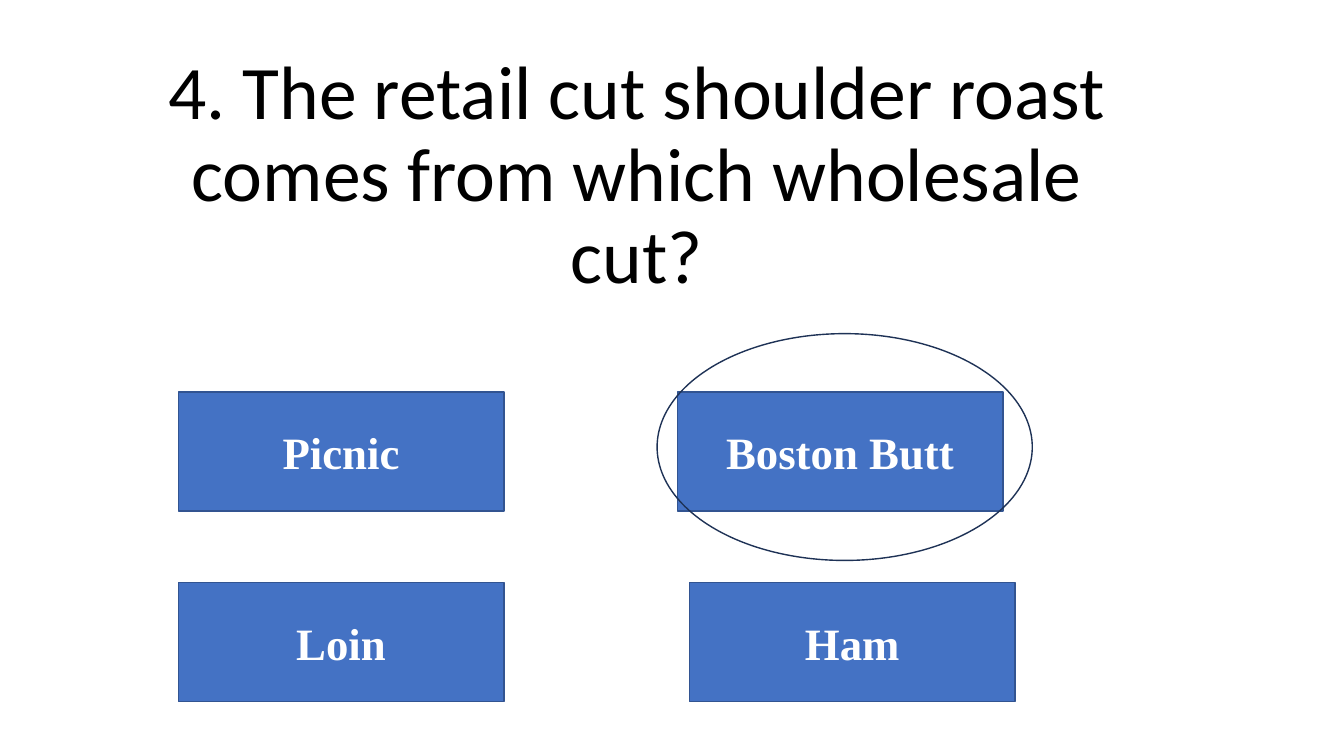
import dataclasses

import pptx
import pptx.dml.color
import pptx.enum.shapes
import pptx.enum.text
import pptx.util

Pt = pptx.util.Pt
RGB = pptx.dml.color.RGBColor.from_string
Kind = pptx.enum.shapes.MSO_SHAPE
Anchor = pptx.enum.text.MSO_ANCHOR


@dataclasses.dataclass
class Theme:
    ink: str = "000000"
    fill: str = "4472C4"
    edge: str = "325491"
    ring: str = "1E3256"
    light: str = "FFFFFF"
    head: str = "Calibri"
    body: str = "Times New Roman"
    big: int = 54
    mid: int = 32
    line: int = 1


class Quiz:
    def __init__(self, slide, theme):
        self.slide = slide
        self.theme = theme

    def label(self, frame, text, face, size, color, bold, anchor):
        frame.text = text
        frame.word_wrap = True
        frame.auto_size = pptx.enum.text.MSO_AUTO_SIZE.NONE
        frame.vertical_anchor = anchor
        para = frame.paragraphs[0]
        para.alignment = pptx.enum.text.PP_ALIGN.CENTER
        font = para.runs[0].font
        font.name, font.size, font.bold = face, Pt(size), bold
        font.color.rgb = RGB(color)

    def title(self, text, left, top, width, height):
        look = self.theme
        shape = self.slide.shapes.title
        shape.left, shape.top = Pt(left), Pt(top)
        shape.width, shape.height = Pt(width), Pt(height)
        self.label(shape.text_frame, text, look.head, look.big, look.ink,
                   False, Anchor.BOTTOM)
        shape.text_frame.paragraphs[0].line_spacing = 0.9

    def shape(self, kind, edge, left, top, width, height):
        shape = self.slide.shapes.add_shape(
            kind, Pt(left), Pt(top), Pt(width), Pt(height))
        shape.shadow.inherit = False
        shape.line.color.rgb = RGB(edge)
        shape.line.width = Pt(self.theme.line)
        return shape

    def choice(self, text, left, top, width, height):
        look = self.theme
        box = self.shape(Kind.RECTANGLE, look.edge, left, top, width, height)
        box.fill.solid()
        box.fill.fore_color.rgb = RGB(look.fill)
        self.label(box.text_frame, text, look.body, look.mid, look.light,
                   True, Anchor.MIDDLE)

    def ring(self, left, top, width, height):
        oval = self.shape(Kind.OVAL, self.theme.ring, left, top, width, height)
        oval.fill.background()


def main():
    deck = pptx.Presentation()
    deck.slide_width, deck.slide_height = Pt(960), Pt(540)
    quiz = Quiz(deck.slides.add_slide(deck.slide_layouts[5]), Theme())
    quiz.title("4. The retail cut shoulder roast comes from which wholesale cut?",
               95, 29.5, 720, 188)
    upper, lower = 280, 416.2
    for text, left, top in (
        ("Picnic", 127.4, upper),
        ("Loin", 127.4, lower),
        ("Ham", 492.5, lower),
        ("Boston Butt", 483.8, upper),
    ):
        quiz.choice(text, left, top, 232.6, 85)
    quiz.ring(469.4, 238.3, 268, 162)
    deck.save("out.pptx")


if __name__ == "__main__":
    main()
